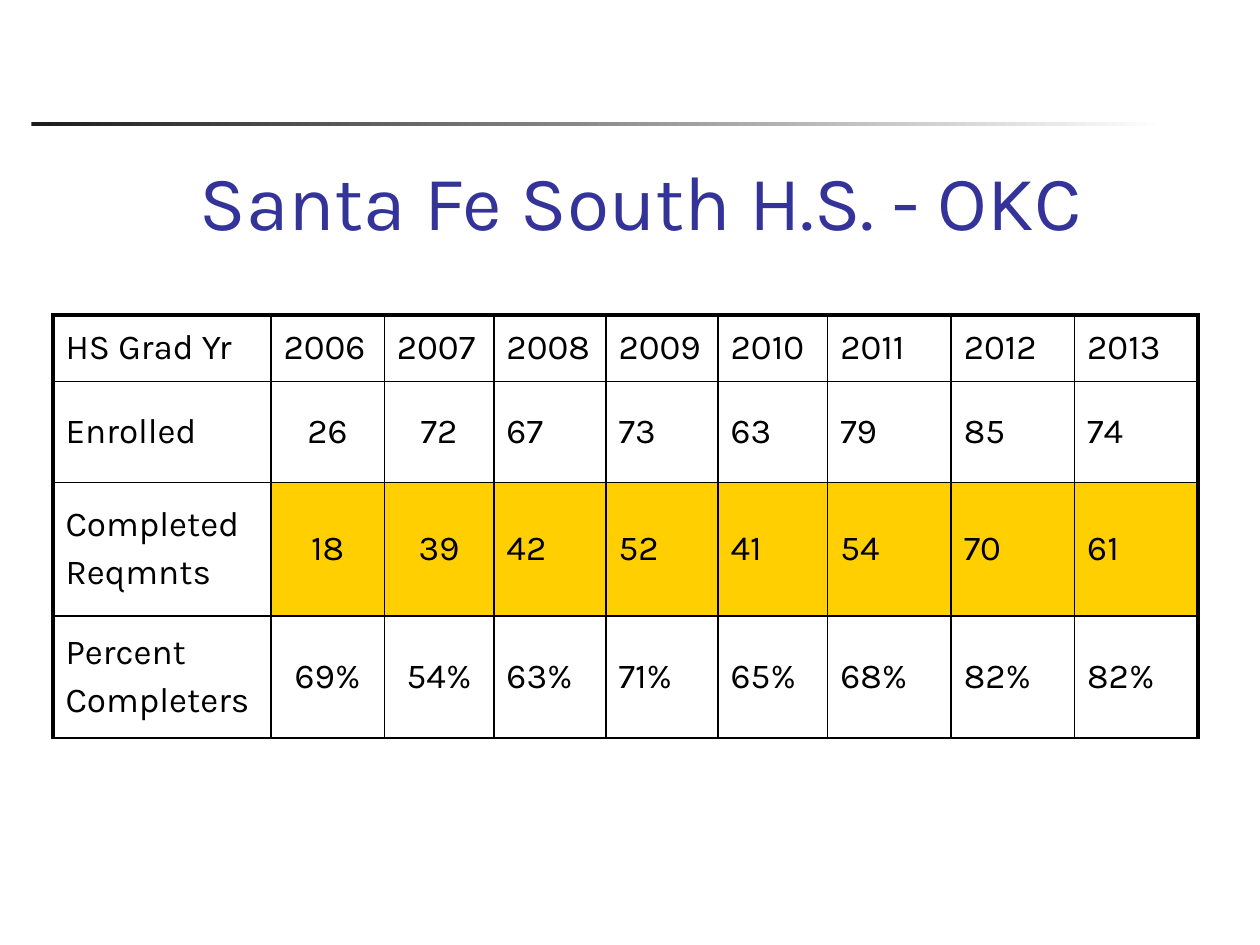
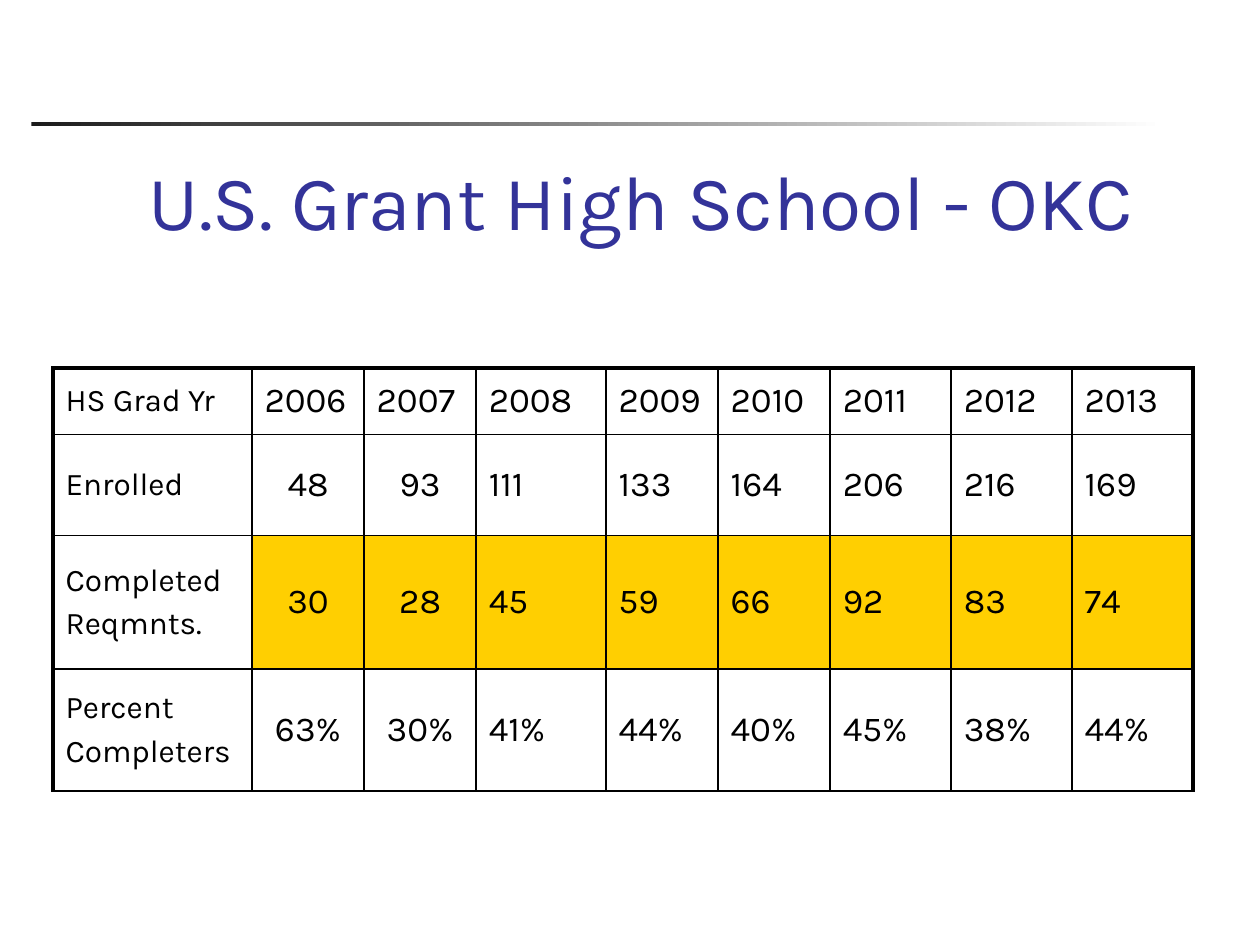
from dataclasses import dataclass

from lxml import etree
from pptx import Presentation
from pptx.dml.color import RGBColor
from pptx.enum.shapes import MSO_SHAPE
from pptx.enum.text import MSO_ANCHOR, PP_ALIGN
from pptx.oxml.ns import qn
from pptx.util import Inches, Pt

RECT = MSO_SHAPE.RECTANGLE
LEFT, CENTER = PP_ALIGN.LEFT, PP_ALIGN.CENTER
MIDDLE, BOTTOM = MSO_ANCHOR.MIDDLE, MSO_ANCHOR.BOTTOM

WIDE, TALL = Inches(10), Inches(7.5)
FONT = "Karla"
COLORS = {
    "title": "333399",
    "ink": "000000",
    "dark": "1C1C1C",
    "white": "FFFFFF",
    "gold": "FFCF01",
}
THIN, THICK = 1, 2.25
TITLE_SIZE, VALUE_SIZE = 44, 20
YEARS = [str(year) for year in range(2006, 2014)]
ROW_PARTS = (7.07, 10.67, 14.13, 12.93)
GOLD_ROW = 2
CENTER_COLS = (1, 2)


@dataclass(frozen=True)
class Box:
    left: float
    top: float
    width: float
    height: float

    def place(self) -> tuple[int, int, int, int]:
        return (across(self.left), down(self.top),
                across(self.width), down(self.height))


@dataclass(frozen=True)
class School:
    title: str
    top: float
    cols: tuple[float, ...]
    label_size: int
    needs: str
    joined: tuple[int, ...]
    done: tuple[int, ...]
    rates: tuple[int, ...]

    def rows(self) -> list[list[str]]:
        return [
            ["HS Grad Yr", *YEARS],
            ["Enrolled", *map(str, self.joined)],
            [f"Completed\n{self.needs}", *map(str, self.done)],
            ["Percent\nCompleters", *(f"{rate}%" for rate in self.rates)],
        ]


RULE_BOX = Box(2.5, 12.93, 90, 0.4)
TITLE_BOX = Box(8.3, 14.4, 85.2, 12.27)
TABLE_LEFT = 4.2

SCHOOLS = [
    School(
        "Santa Fe South H.S. - OKC", 33.33,
        (17.3, 9, 8.7, 8.9, 8.9, 8.7, 9.8, 9.8, 9.8), 20, "Reqmnts",
        (26, 72, 67, 73, 63, 79, 85, 74),
        (18, 39, 42, 52, 41, 54, 70, 61),
        (69, 54, 63, 71, 65, 68, 82, 82),
    ),
    School(
        "U.S. Grant High School - OKC", 38.93,
        (15.8, 8.9, 8.9, 10.3, 8.9, 8.9, 9.6, 9.6, 9.6), 18, "Reqmnts.",
        (48, 93, 111, 133, 164, 206, 216, 169),
        (30, 28, 45, 59, 66, 92, 83, 74),
        (63, 30, 41, 44, 40, 45, 38, 44),
    ),
]


def across(part: float) -> int:
    return round(WIDE * part / 100)


def down(part: float) -> int:
    return round(TALL * part / 100)


def color(name: str) -> RGBColor:
    return RGBColor.from_string(COLORS[name])


def write(frame, text: str, size: int, name: str, align) -> None:
    for index, line in enumerate(text.split("\n")):
        para = frame.add_paragraph() if index else frame.paragraphs[0]
        para.alignment = align
        para.space_before = Pt(size * 0.2 if index else 0)
        run = para.add_run()
        run.text = line
        run.font.name = FONT
        run.font.size = Pt(size)
        run.font.color.rgb = color(name)


def draw_rule(slide) -> None:
    rule = slide.shapes.add_shape(RECT, *RULE_BOX.place())
    rule.shadow.inherit = False
    rule.line.fill.background()
    rule.fill.gradient()
    rule.fill.gradient_angle = 0
    for stop, place, name in zip(rule.fill.gradient_stops, (0, 1),
                                 ("dark", "white")):
        stop.position = place
        stop.color.rgb = color(name)


def draw_title(slide, text: str) -> None:
    frame = slide.shapes.add_textbox(*TITLE_BOX.place()).text_frame
    frame.word_wrap = True
    frame.vertical_anchor = BOTTOM
    write(frame, text, TITLE_SIZE, "title", CENTER)


def edge(cell, widths: dict[str, float]) -> None:
    props = cell._tc.get_or_add_tcPr()
    for side, width in widths.items():
        line = etree.SubElement(props, qn(f"a:ln{side}"), w=str(Pt(width)))
        fill = etree.SubElement(line, qn("a:solidFill"))
        etree.SubElement(fill, qn("a:srgbClr"), val=COLORS["ink"])


def draw_table(slide, school: School) -> None:
    rows = school.rows()
    last = len(school.cols) - 1
    box = Box(TABLE_LEFT, school.top, sum(school.cols), sum(ROW_PARTS))
    table = slide.shapes.add_table(len(rows), last + 1, *box.place()).table
    table.first_row = table.horz_banding = False
    for col, part in zip(table.columns, school.cols):
        col.width = across(part)
    for row, part in zip(table.rows, ROW_PARTS):
        row.height = down(part)
    for r, texts in enumerate(rows):
        for c, text in enumerate(texts):
            cell = table.cell(r, c)
            cell.vertical_anchor = MIDDLE
            edge(cell, {
                "L": THIN if c else THICK,
                "R": THICK if c == last else THIN,
                "T": THIN if r else THICK,
                "B": THIN,
            })
            if r == GOLD_ROW and c:
                cell.fill.solid()
                cell.fill.fore_color.rgb = color("gold")
            else:
                cell.fill.background()
            size = VALUE_SIZE if c else school.label_size
            align = CENTER if r and c in CENTER_COLS else LEFT
            write(cell.text_frame, text, size, "ink", align)


def main() -> None:
    deck = Presentation()
    deck.slide_width, deck.slide_height = WIDE, TALL
    for school in SCHOOLS:
        slide = deck.slides.add_slide(deck.slide_layouts[6])
        draw_rule(slide)
        draw_title(slide, school.title)
        draw_table(slide, school)
    deck.save("out.pptx")


if __name__ == "__main__":
    main()
